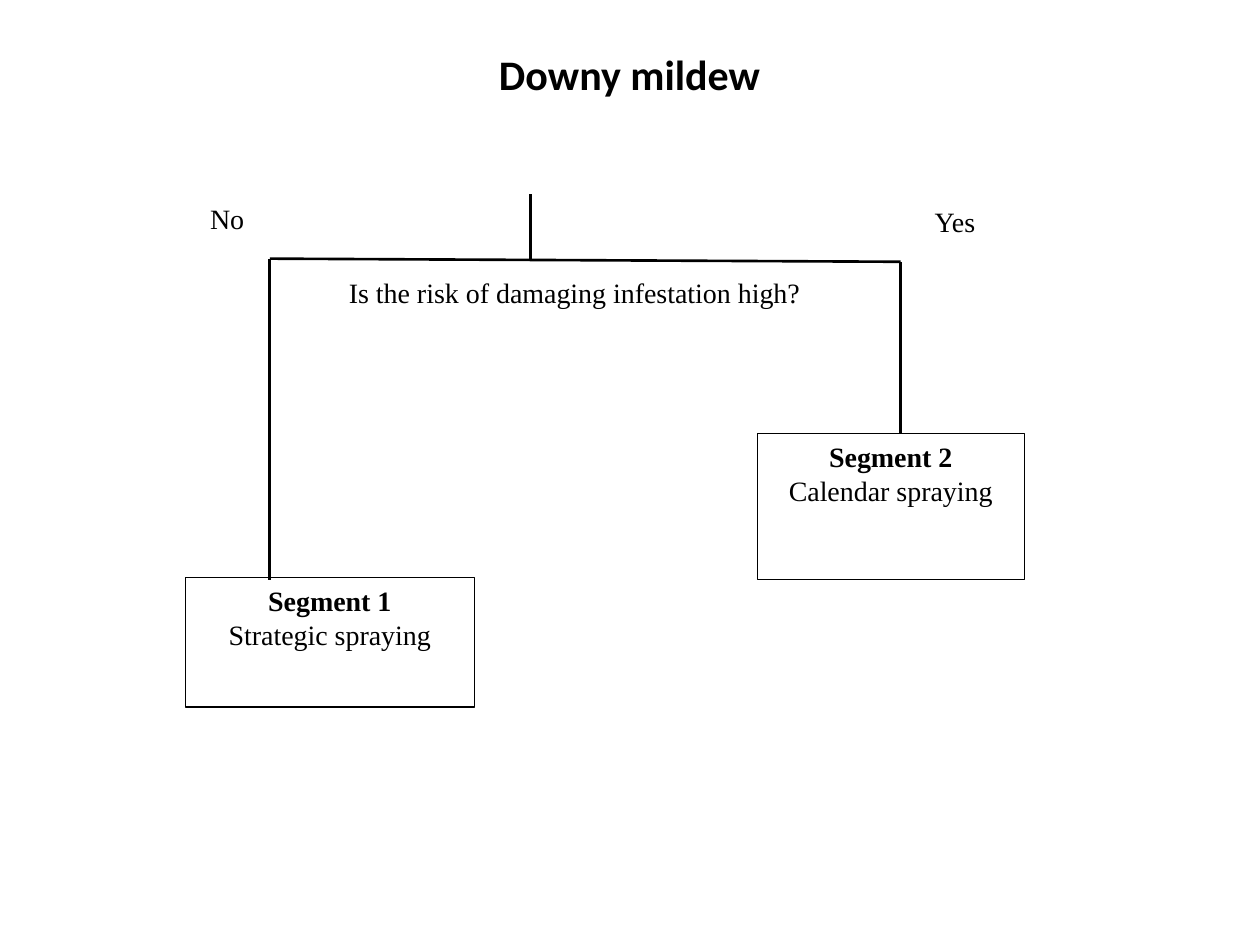
import pptx
import pptx.util
import pptx.dml.color
import pptx.enum.shapes
import pptx.enum.text
import pptx.oxml
from dataclasses import dataclass

Pt = pptx.util.Pt
ALIGN = pptx.enum.text.PP_ALIGN
ANCHOR = pptx.enum.text.MSO_ANCHOR


@dataclass(frozen=True)
class Theme:
    ink: str = "000000"
    paper: str = "FFFFFF"
    title_font: str = "Calibri"
    body_font: str = "Times New Roman"
    title_size: float = 24
    body_size: float = 16
    border: float = 0.75
    branch: float = 1.5


THEME = Theme()


def rgb(value):
    return pptx.dml.color.RGBColor.from_string(value)


def write(paragraph, text, *, font=THEME.body_font, size=THEME.body_size,
          bold=False, align=ALIGN.CENTER):
    """Put one formatted run into a paragraph."""
    paragraph.alignment = align
    run = paragraph.add_run()
    run.text = text
    run.font.name = font
    run.font.size = Pt(size)
    run.font.bold = bold
    run.font.color.rgb = rgb(THEME.ink)


def add_title(slide, text, left, top, width, height):
    title = slide.shapes.title
    title.left, title.top = Pt(left), Pt(top)
    title.width, title.height = Pt(width), Pt(height)
    title.text_frame.vertical_anchor = ANCHOR.MIDDLE
    write(title.text_frame.paragraphs[0], text, font=THEME.title_font,
          size=THEME.title_size, bold=True)


def add_panel(slide, left, top, width, height, bordered=False):
    """Add a plain rectangle and return its text frame."""
    panel = slide.shapes.add_shape(
        pptx.enum.shapes.MSO_SHAPE.RECTANGLE,
        Pt(left), Pt(top), Pt(width), Pt(height))
    panel.shadow.inherit = False
    panel.fill.solid()
    panel.fill.fore_color.rgb = rgb(THEME.paper)
    if bordered:
        panel.line.color.rgb = rgb(THEME.ink)
        panel.line.width = Pt(THEME.border)
    else:
        panel.line.fill.background()
    panel.text_frame.word_wrap = True
    panel.text_frame.vertical_anchor = ANCHOR.TOP
    return panel.text_frame


def add_label(slide, text, *box, align=ALIGN.LEFT):
    write(add_panel(slide, *box).paragraphs[0], text, align=align)


def add_segment(slide, heading, advice, *box):
    frame = add_panel(slide, *box, bordered=True)
    write(frame.paragraphs[0], heading, bold=True)
    write(frame.add_paragraph(), advice)


def add_branch(slide, x1, y1, x2, y2):
    branch = slide.shapes.add_connector(
        pptx.enum.shapes.MSO_CONNECTOR.STRAIGHT, Pt(x1), Pt(y1), Pt(x2), Pt(y2))
    branch.line.color.rgb = rgb(THEME.ink)
    branch.line.width = Pt(THEME.branch)
    properties = branch._element.spPr
    properties.append(properties.makeelement(
        pptx.oxml.ns.qn("a:effectLst"), {}))


def main():
    deck = pptx.Presentation()
    deck.slide_width, deck.slide_height = Pt(720), Pt(540)
    slide = deck.slides.add_slide(deck.slide_layouts[5])

    add_title(slide, "Downy mildew", 25.2, 16, 669, 52)

    # Answers
    add_label(slide, "No", 113, 111.6, 36, 28)
    add_label(slide, "Yes", 527, 113.6, 47.5, 28)

    # Outcomes
    add_segment(slide, "Segment 1", "Strategic spraying", 106, 330, 165, 74)
    add_segment(slide, "Segment 2", "Calendar spraying", 432.7, 247.7, 152.6, 83.5)

    # Question
    add_label(slide, "Is the risk of damaging infestation high?",
              188.6, 154, 279.4, 23, align=ALIGN.CENTER)

    # Decision tree: stem, crossbar, No branch, Yes branch
    stem_x, no_x, yes_x = 303, 154.2, 514.6
    no_y, yes_y = 147.8, 149.6
    add_branch(slide, stem_x, 111, stem_x, no_y)
    add_branch(slide, yes_x, yes_y, no_x, no_y)
    add_branch(slide, no_x, no_y, no_x, 331.2)
    add_branch(slide, yes_x, yes_y, yes_x, 247.7)

    deck.save("out.pptx")


if __name__ == "__main__":
    main()
